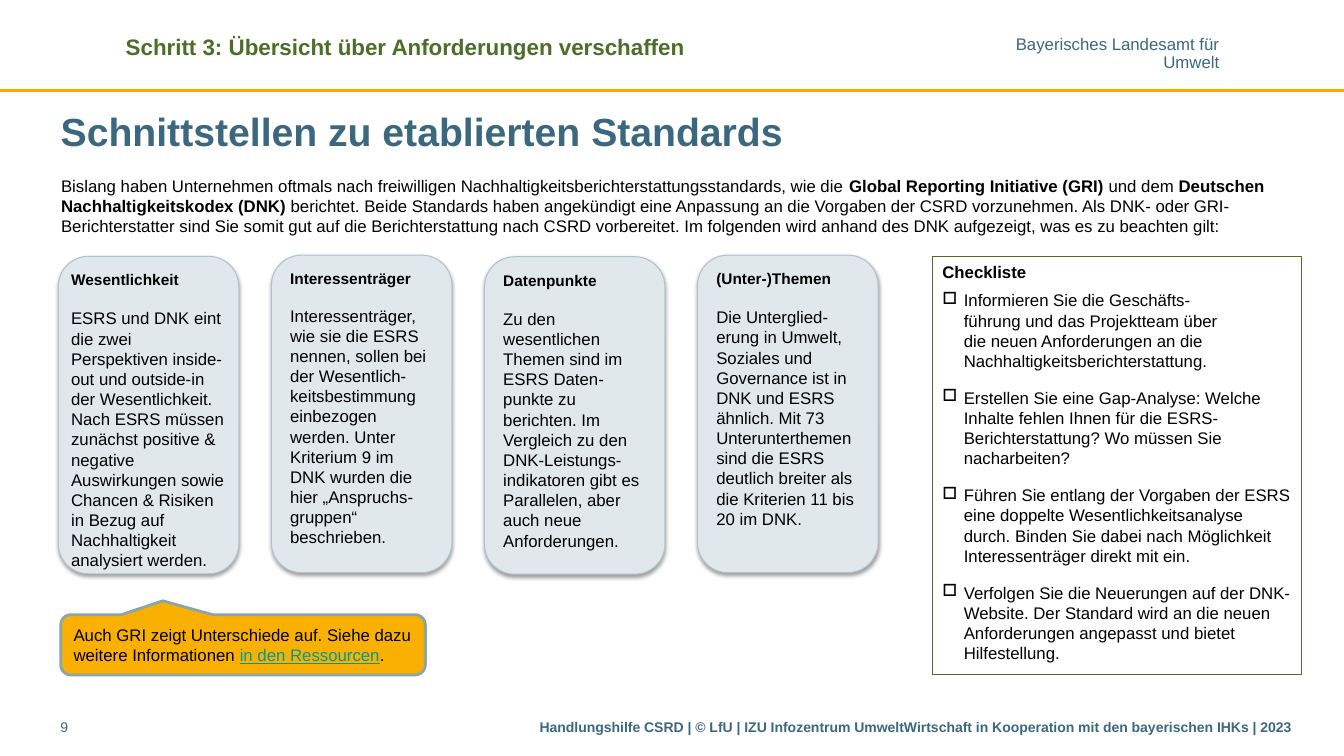
from dataclasses import dataclass
from typing import Any

from lxml import etree
from pptx import Presentation
from pptx import util as u
from pptx.dml.color import RGBColor
from pptx.enum import shapes, text
from pptx.oxml.ns import qn

BLUE, GREEN, BLACK = "3B687F", "4B6E28", "000000"
GOLD, TEAL = "F9AA00", "009999"


@dataclass
class Box:
    left: float
    top: float
    width: float
    height: float

    def place(self) -> list[int]:
        return [u.Cm(v) for v in (self.left, self.top, self.width, self.height)]


@dataclass
class Card:
    head: str
    body: str
    top: float = 6.43
    side: float = 0.25
    gap: float = 13.8


@dataclass
class Label:
    box: Box
    words: str
    size: float
    color: str
    bold: bool = False
    right: bool = False
    side: float = 0.25


CARDS = [
    Card("Wesentlichkeit", "ESRS und DNK eint die zwei Perspektiven inside-out und outside-in "
         "der Wesentlichkeit. Nach ESRS müssen zunächst positive & negative Auswirkungen sowie "
         "Chancen & Risiken in Bezug auf Nachhaltigkeit analysiert werden.", 6.46, 0.1),
    Card("Interessenträger", "Interessenträger, wie sie die ESRS nennen, sollen bei der "
         "Wesentlich-keitsbestimmung einbezogen werden. Unter Kriterium 9 im DNK wurden die hier "
         "„Anspruchs-gruppen“ beschrieben.", gap=12.65),
    Card("Datenpunkte", "Zu den wesentlichen Themen sind im ESRS Daten-punkte zu berichten. "
         "Im Vergleich zu den DNK-Leistungs-indikatoren gibt es Parallelen, aber auch neue "
         "Anforderungen.", 6.47),
    Card("(Unter-)Themen", "Die Unterglied-erung in Umwelt, Soziales und Governance ist in DNK "
         "und ESRS ähnlich. Mit 73 Unterunterthemen sind die ESRS deutlich breiter als die "
         "Kriterien 11 bis 20 im DNK."),
]

TASKS = [
    "Informieren Sie die Geschäfts-\vführung und das Projektteam über\vdie neuen Anforderungen "
    "an die Nachhaltigkeitsberichterstattung.",
    "Erstellen Sie eine Gap-Analyse: Welche Inhalte fehlen Ihnen für die "
    "ESRS-Berichterstattung? Wo müssen Sie nacharbeiten?",
    "Führen Sie entlang der Vorgaben der ESRS eine doppelte Wesentlichkeitsanalyse durch. "
    "Binden Sie dabei nach Möglichkeit Interessenträger direkt mit ein.",
    "Verfolgen Sie die Neuerungen auf der DNK-Website. Der Standard wird an die neuen "
    "Anforderungen angepasst und bietet Hilfestellung.",
]

LABELS = [
    Label(Box(25.58, 0.94, 5.15, 0.86), "Bayerisches Landesamt für\nUmwelt", 12, BLUE,
          right=True, side=0),
    Label(Box(2.92, 0.71, 15.6, 0.94), "Schritt 3: Übersicht über Anforderungen verschaffen",
          16, GREEN, True),
    Label(Box(1.52, 17.98, 1.78, 0.79), "9", 10, BLUE, side=0),
    Label(Box(13.13, 17.98, 19.66, 0.79), "Handlungshilfe CSRD | © LfU | IZU Infozentrum "
          "UmweltWirtschaft in Kooperation mit den bayerischen IHKs | 2023", 10, BLUE, True, True),
]

INTRO = [
    ("Bislang haben Unternehmen oftmals nach freiwilligen "
     "Nachhaltigkeitsberichterstattungsstandards, wie die ", False),
    ("Global Reporting Initiative (GRI)", True),
    (" und dem ", False),
    ("Deutschen Nachhaltigkeitskodex (DNK)", True),
    (" berichtet. Beide Standards haben angekündigt eine Anpassung an die Vorgaben der CSRD "
     "vorzunehmen. Als DNK- oder GRI-Berichterstatter sind Sie somit gut auf die "
     "Berichterstattung nach CSRD vorbereitet. Im folgenden wird anhand des DNK aufgezeigt, "
     "was es zu beachten gilt:", False),
]


def paint(target: Any, color: str) -> None:
    target.rgb = RGBColor.from_string(color)


def style(par: Any, size: float, color: str = BLACK, bold: bool = False) -> None:
    for run in par.runs:
        run.font.name = "Arial"
        run.font.size = u.Pt(size)
        run.font.bold = bold
        paint(run.font.color, color)


def setup(frame: Any, side: float = 0.25, edge: float = 0.13) -> None:
    frame.word_wrap = True
    frame.auto_size = text.MSO_AUTO_SIZE.NONE
    frame.vertical_anchor = text.MSO_ANCHOR.TOP
    frame.margin_left = frame.margin_right = u.Cm(side)
    frame.margin_top = frame.margin_bottom = u.Cm(edge)


def add_text(slide: Any, label: Label) -> None:
    frame = slide.shapes.add_textbox(*label.box.place()).text_frame
    setup(frame, label.side, 0 if "\n" in label.words else 0.13)
    frame.text = label.words
    for par in frame.paragraphs:
        par.alignment = text.PP_ALIGN.RIGHT if label.right else text.PP_ALIGN.LEFT
        if "\n" in label.words:
            par.line_spacing = 0.85
        style(par, label.size, label.color, label.bold)


def add_block(slide: Any, kind: Any, box: Box, fill: str, line: str, width: float) -> Any:
    block = slide.shapes.add_shape(kind, *box.place())
    block.shadow.inherit = False
    if fill:
        block.fill.solid()
        paint(block.fill.fore_color, fill)
    else:
        block.fill.background()
    paint(block.line.color, line)
    block.line.width = u.Pt(width)
    setup(block.text_frame)
    return block


def add_card(slide: Any, card: Card, left: float) -> None:
    block = add_block(slide, shapes.MSO_SHAPE.ROUNDED_RECTANGLE,
                      Box(left, card.top, 4.55, 8.0), "E1E8EC", "B0C2CB", 0.75)
    glow = etree.SubElement(block._element.spPr.find(qn("a:effectLst")), qn("a:outerShdw"),
                            blurRad="40000", dist="20000", dir="5400000", rotWithShape="0")
    tint = etree.SubElement(glow, qn("a:srgbClr"), val=BLACK)
    etree.SubElement(tint, qn("a:alpha"), val="38000")
    frame = block.text_frame
    setup(frame, card.side)
    frame.text = f"{card.head}\n{card.body}"
    head, body = frame.paragraphs
    head.alignment = body.alignment = text.PP_ALIGN.LEFT
    body.space_before = u.Pt(card.gap)
    style(head, 11, bold=True)
    style(body, 12)


def add_task(frame: Any, task: str) -> None:
    par = frame.add_paragraph()
    par.text = task
    for gap in par._p.findall(qn("a:br")):
        etree.SubElement(gap, qn("a:rPr"), sz="1200")
    props = par._p.get_or_add_pPr()
    props.set("marL", str(u.Cm(0.54)))
    props.set("indent", str(-u.Cm(0.54)))
    tint = etree.SubElement(props, qn("a:buClr"))
    etree.SubElement(tint, qn("a:srgbClr"), val=BLACK)
    etree.SubElement(props, qn("a:buChar"), char="□")
    par.alignment = text.PP_ALIGN.LEFT
    par.space_before = par.space_after = u.Pt(6)
    style(par, 12)


def add_list(slide: Any) -> None:
    block = add_block(slide, shapes.MSO_SHAPE.RECTANGLE,
                      Box(23.5, 6.46, 9.3, 10.54), "", GREEN, 1)
    frame = block.text_frame
    frame.text = "Checkliste"
    frame.paragraphs[0].alignment = text.PP_ALIGN.LEFT
    style(frame.paragraphs[0], 12, bold=True)
    for task in TASKS:
        add_task(frame, task)


def add_hint(slide: Any) -> None:
    hint = add_block(slide, shapes.MSO_SHAPE.ROUNDED_RECTANGULAR_CALLOUT,
                     Box(1.53, 15.49, 9.19, 1.52), "F9B000", "8AA6A8", 2)
    for slot, value in enumerate((-0.22, -0.73, 0.17)):
        hint.adjustments[slot] = value
    hint.text_frame.vertical_anchor = text.MSO_ANCHOR.MIDDLE
    par = hint.text_frame.paragraphs[0]
    par.alignment = text.PP_ALIGN.LEFT
    for words in ("Auch GRI zeigt Unterschiede auf. Siehe dazu weitere Informationen ",
                  "in den Ressourcen", "."):
        par.add_run().text = words
    style(par, 12)
    link = par.runs[1].font
    link.underline = True
    paint(link.color, TEAL)


def add_intro(slide: Any) -> None:
    frame = slide.shapes.add_textbox(*Box(1.29, 4.29, 31.27, 2.0).place()).text_frame
    setup(frame)
    par = frame.paragraphs[0]
    for words, _ in INTRO:
        par.add_run().text = words
    style(par, 12)
    for run, (_, bold) in zip(par.runs, INTRO):
        run.font.bold = bold


def add_title(slide: Any) -> None:
    title = slide.shapes.title
    title.left, title.top, title.width, title.height = Box(1.53, 2.6, 31.27, 1.4).place()
    frame = title.text_frame
    setup(frame, 0)
    frame.vertical_anchor = text.MSO_ANCHOR.MIDDLE
    frame.text = "Schnittstellen zu etablierten Standards"
    frame.paragraphs[0].alignment = text.PP_ALIGN.LEFT
    style(frame.paragraphs[0], 28, BLUE, True)


def main() -> None:
    deck = Presentation()
    deck.slide_width, deck.slide_height = u.Cm(33.87), u.Cm(19.05)
    slide = deck.slides.add_slide(deck.slide_layouts[5])
    rule = slide.shapes.add_connector(shapes.MSO_CONNECTOR.STRAIGHT, 0, u.Cm(2.29),
                                      deck.slide_width, u.Cm(2.29))
    paint(rule.line.color, GOLD)
    rule.line.width = u.Pt(2)
    etree.SubElement(rule._element.spPr, qn("a:effectLst"))
    add_title(slide)
    for label in LABELS:
        add_text(slide, label)
    add_intro(slide)
    add_hint(slide)
    add_list(slide)
    for slot, card in enumerate(CARDS):
        add_card(slide, card, 1.47 + 5.37 * slot)
    deck.save("out.pptx")


if __name__ == "__main__":
    main()
